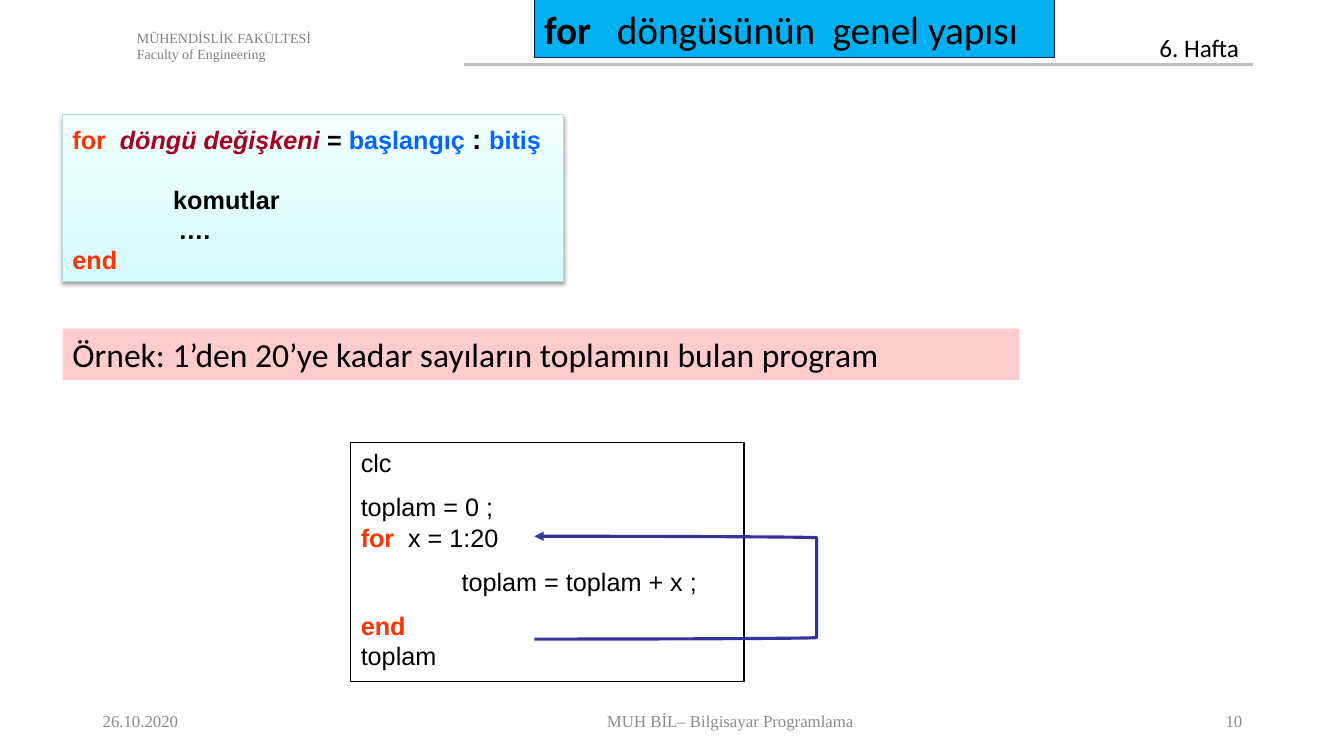
from dataclasses import dataclass

from lxml import etree
from pptx import Presentation
from pptx import util as u
from pptx.dml.color import RGBColor
from pptx.enum import shapes, text
from pptx.oxml import ns

KEYWORD, VALUE, VARIABLE = "FF3300", "0066FF", "A50021"
BLACK, GREY, FOOTER_GREY = "000000", "808080", "8C8C8C"
SERIF = "Times New Roman"
LEFT, CENTER, RIGHT = text.PP_ALIGN.LEFT, text.PP_ALIGN.CENTER, text.PP_ALIGN.RIGHT


@dataclass
class Run:
    text: str
    color: str | None = None
    bold: bool | None = None
    italic: bool | None = None
    size: float | None = None


@dataclass
class Line:
    runs: list[Run]
    before: float = 0
    indent: float = 0
    tabs: tuple[float, ...] = ()


@dataclass
class Box:
    left: float
    top: float
    width: float
    height: float
    lines: list[Line]
    size: float
    font: str
    color: str = BLACK
    align: text.PP_ALIGN = LEFT
    middle: bool = False
    fill: str | None = None
    border: str | None = None


def rgb(color: str) -> RGBColor:
    return RGBColor.from_string(color)


def add_element(parent, tag: str, **attributes):
    element = etree.SubElement(parent, ns.qn(tag))
    for name, value in attributes.items():
        element.set(name, str(value))
    return element


def format_line(paragraph, line: Line, box: Box) -> None:
    properties = paragraph._p.get_or_add_pPr()
    if line.indent:
        properties.set("marL", str(u.Inches(line.indent)))
        properties.set("indent", "0")
    if line.tabs:
        tab_list = add_element(properties, "a:tabLst")
        for position in line.tabs:
            add_element(tab_list, "a:tab", pos=u.Inches(position), algn="l")
    paragraph.alignment = box.align
    if line.before:
        paragraph.space_before = u.Pt(line.before)
    paragraph.font.size = u.Pt(box.size)
    paragraph.font.name = box.font
    paragraph.font.color.rgb = rgb(box.color)
    for part in line.runs:
        run = paragraph.add_run()
        run.text = part.text
        run.font.bold = part.bold
        run.font.italic = part.italic
        if part.size:
            run.font.size = u.Pt(part.size)
        if part.color:
            run.font.color.rgb = rgb(part.color)


def add_box(slide, box: Box):
    place = [u.Inches(n) for n in (box.left, box.top, box.width, box.height)]
    if box.fill or box.border:
        shape = slide.shapes.add_shape(shapes.MSO_SHAPE.RECTANGLE, *place)
        shape.shadow.inherit = False
        if box.fill:
            shape.fill.solid()
            shape.fill.fore_color.rgb = rgb(box.fill)
        else:
            shape.fill.background()
        if box.border:
            shape.line.color.rgb = rgb(box.border)
            shape.line.width = u.Pt(0.75)
        else:
            shape.line.fill.background()
    else:
        shape = slide.shapes.add_textbox(*place)
    frame = shape.text_frame
    frame.word_wrap = True
    frame.vertical_anchor = text.MSO_ANCHOR.MIDDLE if box.middle else text.MSO_ANCHOR.TOP
    for index, line in enumerate(box.lines):
        paragraph = frame.add_paragraph() if index else frame.paragraphs[0]
        format_line(paragraph, line, box)
    return shape


def add_header_rule(slide) -> None:
    rule = slide.shapes.add_connector(
        shapes.MSO_CONNECTOR.STRAIGHT,
        u.Inches(4.6), u.Inches(0.64), u.Inches(12.43), u.Inches(0.64))
    rule.line.color.rgb = rgb("BFBFBF")
    rule.line.width = u.Pt(1.5)
    add_element(rule._element.spPr, "a:effectLst")


def add_glow_and_shadow(shape) -> None:
    """Give the syntax box its upward gradient and soft drop shadow."""
    shape.fill.gradient()
    shape.fill.gradient_angle = 90
    properties = shape._element.spPr
    stops = properties.find(".//" + ns.qn("a:gsLst"))
    stops.clear()
    for percent, color in ((0, "D3FBFF"), (35, "DFFCFF"), (100, "F2FEFF")):
        stop = add_element(stops, "a:gs", pos=percent * 1000)
        add_element(stop, "a:srgbClr", val=color)
    shadow = add_element(properties.find(ns.qn("a:effectLst")), "a:outerShdw",
                         blurRad=u.Pt(3.1), dist=u.Pt(1.6), dir=90 * 60000, rotWithShape=0)
    add_element(add_element(shadow, "a:srgbClr", val=BLACK), "a:alpha", val=38000)


def add_loop_arrow(slide) -> None:
    bracket = slide.shapes.add_shape(
        shapes.MSO_SHAPE.RIGHT_BRACKET,
        u.Inches(5.3), u.Inches(5.32), u.Inches(2.8), u.Inches(1.02))
    bracket.adjustments[0] = 0.015
    bracket.shadow.inherit = False
    bracket.fill.background()
    bracket.line.color.rgb = rgb("333399")
    bracket.line.width = u.Pt(2.25)
    add_element(bracket.line._get_or_add_ln(), "a:headEnd", type="triangle")


def main() -> None:
    presentation = Presentation()
    presentation.slide_width = u.Inches(13.33)
    presentation.slide_height = u.Inches(7.5)
    slide = presentation.slides.add_slide(presentation.slide_layouts[6])

    faculty = [Line([Run("MÜHENDİSLİK FAKÜLTESİ")]), Line([Run("Faculty of Engineering")])]
    title = [Line([Run("for", bold=True), Run("\tdöngüsünün\tgenel yapısı")], tabs=(0.72, 2.86))]
    syntax = [
        Line([Run("for\t", KEYWORD), Run("döngü değişkeni ", VARIABLE, italic=True),
              Run("= "), Run("başlangıç ", VALUE), Run(": ", size=20),
              Run("bitiş", VALUE)], tabs=(0.47,)),
        Line([Run("komutlar")], before=21, indent=1),
        Line([Run("….")], indent=1.05),
        Line([Run("end", KEYWORD)]),
    ]
    for line in syntax:
        for run in line.runs:
            run.bold = True
    example = [Line([Run("Örnek: 1’den 20’ye kadar sayıların toplamını bulan program")])]
    program = [
        Line([Run("clc")]),
        Line([Run("toplam = 0 ;")], before=10),
        Line([Run("for", KEYWORD, True), Run("\tx = 1:20")], tabs=(0.47,)),
        Line([Run("toplam = toplam + x ;")], before=10, indent=1),
        Line([Run("end", KEYWORD, True)], before=10),
        Line([Run("toplam")]),
    ]

    add_header_rule(slide)
    add_box(slide, Box(1.26, 0.24, 6.67, 0.44, faculty, 10, SERIF, GREY))
    add_box(slide, Box(11.4, 0.27, 1.01, 0.4, [Line([Run("6. Hafta")])], 18, "Calibri"))
    for left, width, label, align in (
            (0.92, 1.57, "26.10.2020", LEFT),
            (2.73, 9.03, "MUH BİL– Bilgisayar Programlama", CENTER),
            (11.97, 0.45, "10", RIGHT)):
        add_box(slide, Box(left, 6.95, width, 0.4, [Line([Run(label)])], 12, SERIF,
                           FOOTER_GREY, align, middle=True))
    add_box(slide, Box(5.3, 0, 5.16, 0.57, title, 28, "Calibri", fill="00B0F0", border="002060"))
    syntax_box = add_box(slide, Box(0.62, 1.14, 4.97, 1.65, syntax, 18, "Arial",
                                    middle=True, border="B6DCDF"))
    add_glow_and_shadow(syntax_box)
    add_box(slide, Box(0.62, 3.26, 9.49, 0.51, example, 24, "Calibri", fill="FFCCCC"))
    add_box(slide, Box(3.48, 4.39, 3.9, 2.37, program, 18, "Arial", border=BLACK))
    add_loop_arrow(slide)
    presentation.save("out.pptx")


if __name__ == "__main__":
    main()
